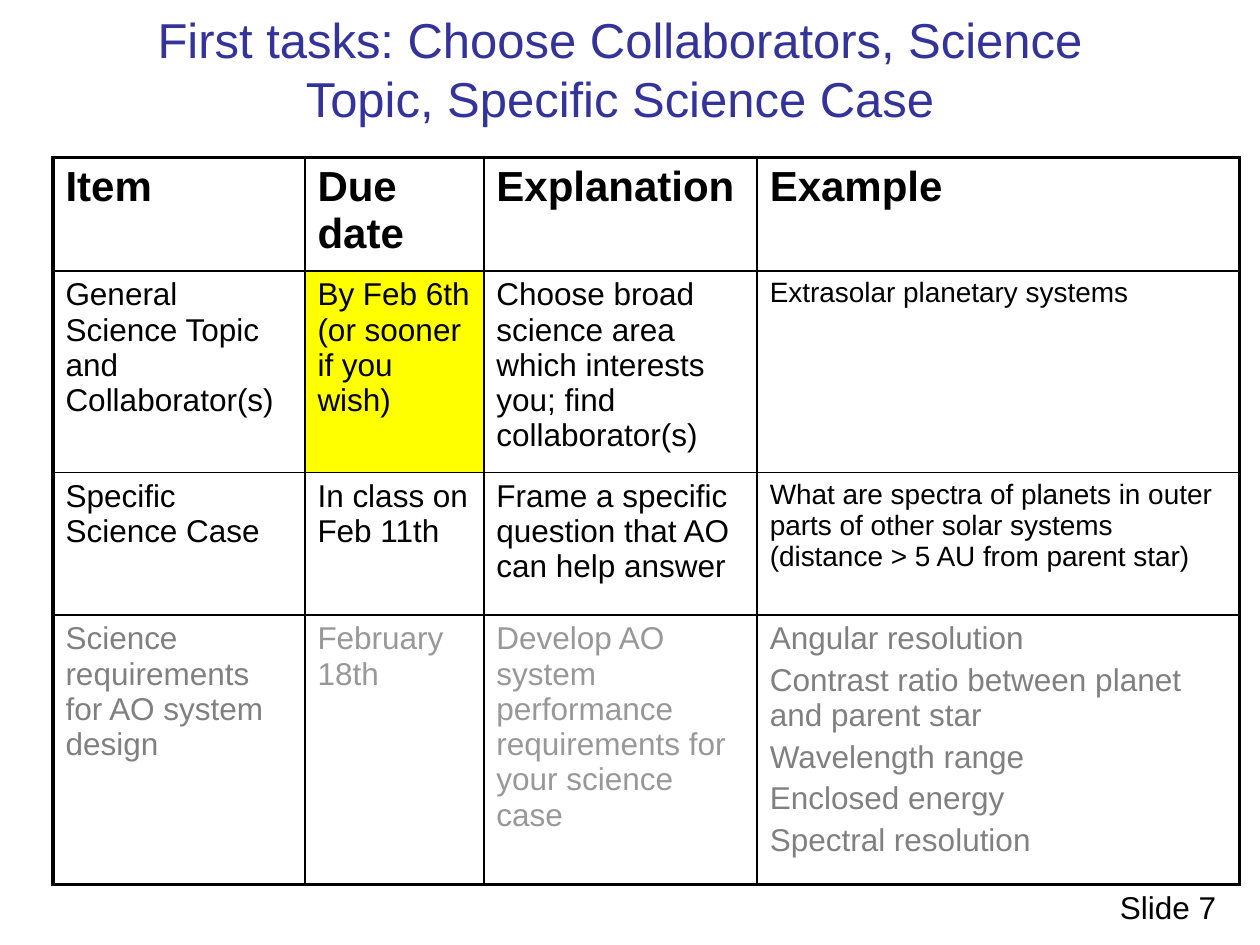
from lxml import etree
from pptx import Presentation
from pptx import util as u
from pptx.dml.color import RGBColor
from pptx.enum import text
from pptx.oxml.ns import qn

HUES = {"ink": "000000", "title": "333399", "mark": "FFFF00",
        "gray": "808080", "pale": "989898"}


def write(para, words, size, hue, bold=False):
    run = para.add_run()
    run.text = words
    look = {"name": "Arial", "size": u.Pt(size), "bold": bold}
    for key, val in look.items():
        setattr(run.font, key, val)
    run.font.color.rgb = RGBColor.from_string(HUES[hue])


def edge(cell, side, width):
    line = etree.SubElement(cell._tc.get_or_add_tcPr(), qn("a:ln" + side),
                            w=str(int(u.Pt(width))))
    fill = etree.SubElement(line, qn("a:solidFill"))
    etree.SubElement(fill, qn("a:srgbClr"), val=HUES["ink"])


deck = Presentation()
deck.slide_width, deck.slide_height = u.Inches(10), u.Inches(7.5)
slide = deck.slides.add_slide(deck.slide_layouts[5])

# Title
title = slide.shapes.title
place = {"left": 0.67, "top": -0.08, "width": 8.5, "height": 1.25}
for key, val in place.items():
    setattr(title, key, u.Inches(val))
frame = title.text_frame
form = {"word_wrap": True, "auto_size": text.MSO_AUTO_SIZE.NONE,
        "vertical_anchor": text.MSO_ANCHOR.MIDDLE}
for key, val in form.items():
    setattr(frame, key, val)
para = frame.paragraphs[0]
para.alignment = text.PP_ALIGN.CENTER
write(para, "First tasks: Choose Collaborators, Science Topic, "
      "Specific Science Case", 28, "title")

# Task table: one list of paragraphs per cell
rows = [
    [["Item"], ["Due date"], ["Explanation"], ["Example"]],
    [["General Science Topic and Collaborator(s)"],
     ["By Feb 6th (or sooner if you wish)"],
     ["Choose broad science area which interests you; "
      "find collaborator(s)"],
     ["Extrasolar planetary systems"]],
    [["Specific Science Case"],
     ["In class on Feb 11th"],
     ["Frame a specific question that AO can help answer"],
     ["What are spectra of planets in outer parts of other solar systems "
      "(distance > 5 AU from parent star)"]],
    [["Science requirements for AO system design"],
     ["February 18th"],
     ["Develop AO system performance requirements for your science case"],
     ["Angular resolution",
      "Contrast ratio between planet and parent star",
      "Wavelength range", "Enclosed energy", "Spectral resolution"]],
]
wide = [2, 1.42, 2.17, 3.83]
high = [0.9, 1.6, 1.13, 2.14]
sizes = [[24] * 4, [18, 18, 18, 16], [18, 18, 18, 16], [18] * 4]
tints = [["ink"] * 4] * 3 + [["gray", "pale", "pale", "gray"]]

grid = slide.shapes.add_table(
    len(high), len(wide), u.Inches(0.42), u.Inches(1.25),
    u.Inches(sum(wide)), u.Inches(sum(high))).table
grid.first_row = grid.horz_banding = False
for col, size in zip(grid.columns, wide):
    col.width = u.Inches(size)
for row, size in zip(grid.rows, high):
    row.height = u.Inches(size)

for r, row in enumerate(rows):
    for c, paras in enumerate(row):
        cell = grid.cell(r, c)
        # Heavy outer frame, thin inner lines
        outer = {"L": c == 0, "R": c == len(wide) - 1,
                 "T": r == 0, "B": r == len(high) - 1}
        for side, thick in outer.items():
            edge(cell, side, 2.25 if thick else 1)
        if (r, c) == (1, 1):
            cell.fill.solid()
            cell.fill.fore_color.rgb = RGBColor.from_string(HUES["mark"])
        else:
            cell.fill.background()
        frame = cell.text_frame
        for n, words in enumerate(paras):
            para = frame.add_paragraph() if n else frame.paragraphs[0]
            if n:
                para.space_before = u.Pt(3.6)
            write(para, words, sizes[r][c], tints[r][c], bold=r == 0)

# Slide number
box = slide.shapes.add_textbox(u.Inches(7.67), u.Inches(7),
                               u.Inches(2.08), u.Inches(0.5))
box.text_frame.word_wrap = True
para = box.text_frame.paragraphs[0]
para.alignment = text.PP_ALIGN.RIGHT
write(para, "Slide 7", 18, "ink")

deck.save("out.pptx")
